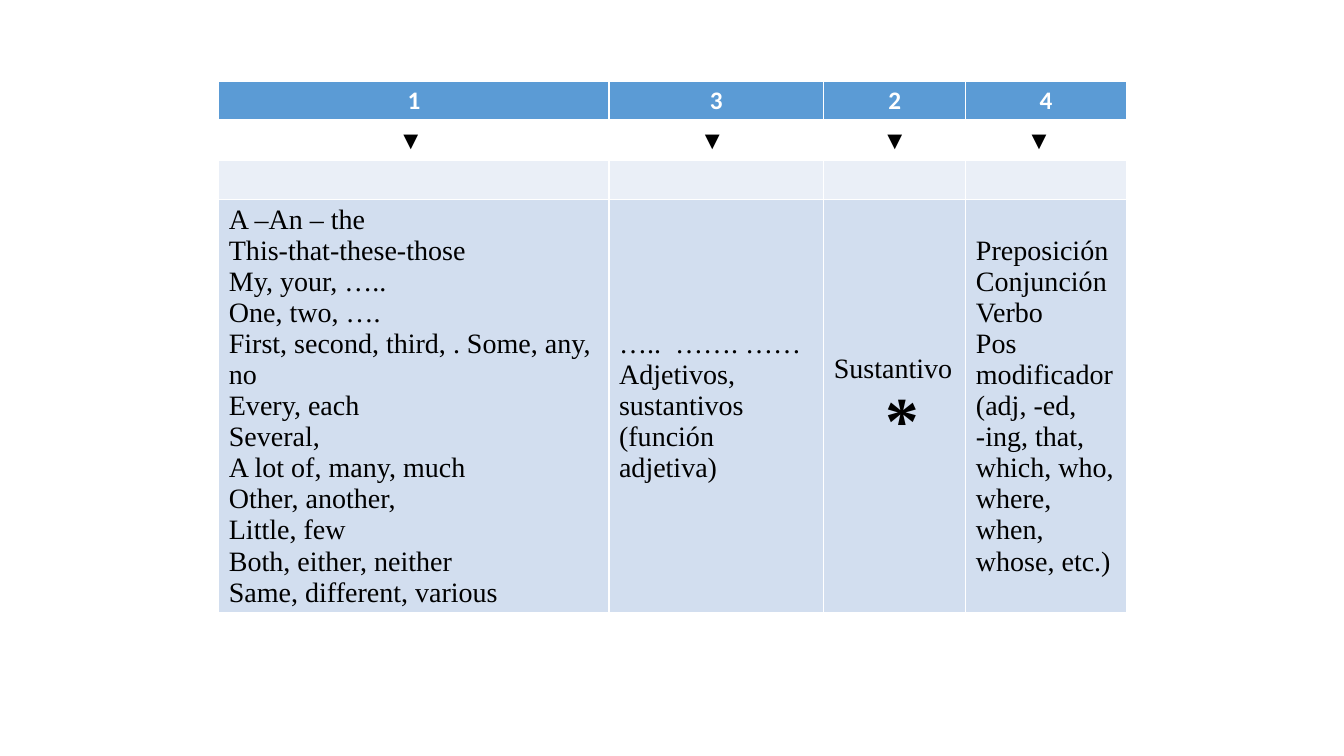
import pptx
import pptx.util
import pptx.dml.color
import pptx.enum.text
import pptx.oxml
import pptx.oxml.ns
from dataclasses import dataclass

Inches = pptx.util.Inches
Pt = pptx.util.Pt
Align = pptx.enum.text.PP_ALIGN
Anchor = pptx.enum.text.MSO_ANCHOR


@dataclass(frozen=True)
class Theme:
    head: str = "5B9BD5"
    pale: str = "EAEFF7"
    band: str = "D2DEEF"
    white: str = "FFFFFF"
    black: str = "000000"
    sans: str = "Calibri"
    serif: str = "Times New Roman"
    small: int = 18
    body: int = 20
    star: int = 48


THEME = Theme()
COLS = [3.87, 2.13, 1.41, 1.59]
ROWS = [0.38, 0.4, 0.37, 4.1]
ORDER = ["1", "3", "2", "4"]
# Right margins that place each arrow under its number
PADS = [0.16, 0.18, 0.1, 0.24]
WORDS = [
    ["A –An – the", "This-that-these-those", "My, your, …..",
     "One, two, ….", "First, second, third, . Some, any, no",
     "Every, each", "Several,", "A lot of, many, much",
     "Other, another,", "Little, few", "Both, either, neither",
     "Same, different, various"],
    ["…..  ……. ……", "Adjetivos, sustantivos (función adjetiva)"],
    ["Sustantivo"],
    ["Preposición", "Conjunción", "Verbo", "Pos modificador",
     "(adj, -ed, -ing, that, which, who, where, when, whose, etc.)"],
]


def color(code):
    return pptx.dml.color.RGBColor.from_string(code)


def write(para, text, size=THEME.body, font=THEME.serif, tint=THEME.black,
          bold=False, align=Align.LEFT, indent=0):
    """Write one formatted paragraph."""
    para.alignment = align
    if indent:
        para._p.get_or_add_pPr().set("marL", str(Inches(indent)))
    run = para.add_run()
    run.text = text
    run.font.size = Pt(size)
    run.font.name = font
    run.font.bold = bold
    run.font.color.rgb = color(tint)


def border(cell, base):
    """Draw white rules round a cell; base is the lower width in points."""
    props = cell._tc.get_or_add_tcPr()
    for side, width in (("L", 1), ("R", 1), ("T", 1), ("B", base)):
        props.append(pptx.oxml.parse_xml(
            f'<a:ln{side} {pptx.oxml.ns.nsdecls("a")} w="{Pt(width)}">'
            f'<a:solidFill><a:srgbClr val="{THEME.white}"/></a:solidFill>'
            f'</a:ln{side}>'))


def style(cell, fill, base=1):
    border(cell, base)
    cell.fill.solid()
    cell.fill.fore_color.rgb = color(fill)
    cell.vertical_anchor = Anchor.MIDDLE
    cell.margin_left = cell.margin_right = Inches(0.1)
    cell.margin_top = cell.margin_bottom = Inches(0.04)


def grid(slide):
    """Add the empty, coloured table."""
    frame = slide.shapes.add_table(
        len(ROWS), len(COLS), Inches(2.17), Inches(0.81),
        Inches(sum(COLS)), Inches(sum(ROWS)))
    table = frame.table
    table.first_row = table.horz_banding = False
    for col, width in zip(table.columns, COLS):
        col.width = Inches(width)
    fills = [THEME.head, THEME.white, THEME.pale, THEME.band]
    for i, (row, height) in enumerate(zip(table.rows, ROWS)):
        row.height = Inches(height)
        for cell in row.cells:
            style(cell, fills[i], base=1 if i else 3)
    return table


def lines(cell, texts):
    """Fill a cell with one paragraph for each text."""
    frame = cell.text_frame
    for i, text in enumerate(texts):
        write(frame.add_paragraph() if i else frame.paragraphs[0], text)


def main():
    deck = pptx.Presentation()
    deck.slide_width = Inches(13.33)
    deck.slide_height = Inches(7.5)
    slide = deck.slides.add_slide(deck.slide_layouts[6])
    table = grid(slide)

    # Numbers, arrows and word lists, column by column
    for i, (num, pad, words) in enumerate(zip(ORDER, PADS, WORDS)):
        write(table.cell(0, i).text_frame.paragraphs[0], num,
              size=THEME.small, font=THEME.sans, tint=THEME.white,
              bold=True, align=Align.CENTER)
        arrow = table.cell(1, i)
        arrow.margin_right = Inches(pad)
        write(arrow.text_frame.paragraphs[0], "▼", size=THEME.small,
              align=Align.CENTER)
        lines(table.cell(3, i), words)

    # Star under the noun
    write(table.cell(3, 2).text_frame.add_paragraph(), "*", size=THEME.star,
          bold=True, align=Align.CENTER, indent=0.14)
    deck.save("out.pptx")


if __name__ == "__main__":
    main()
